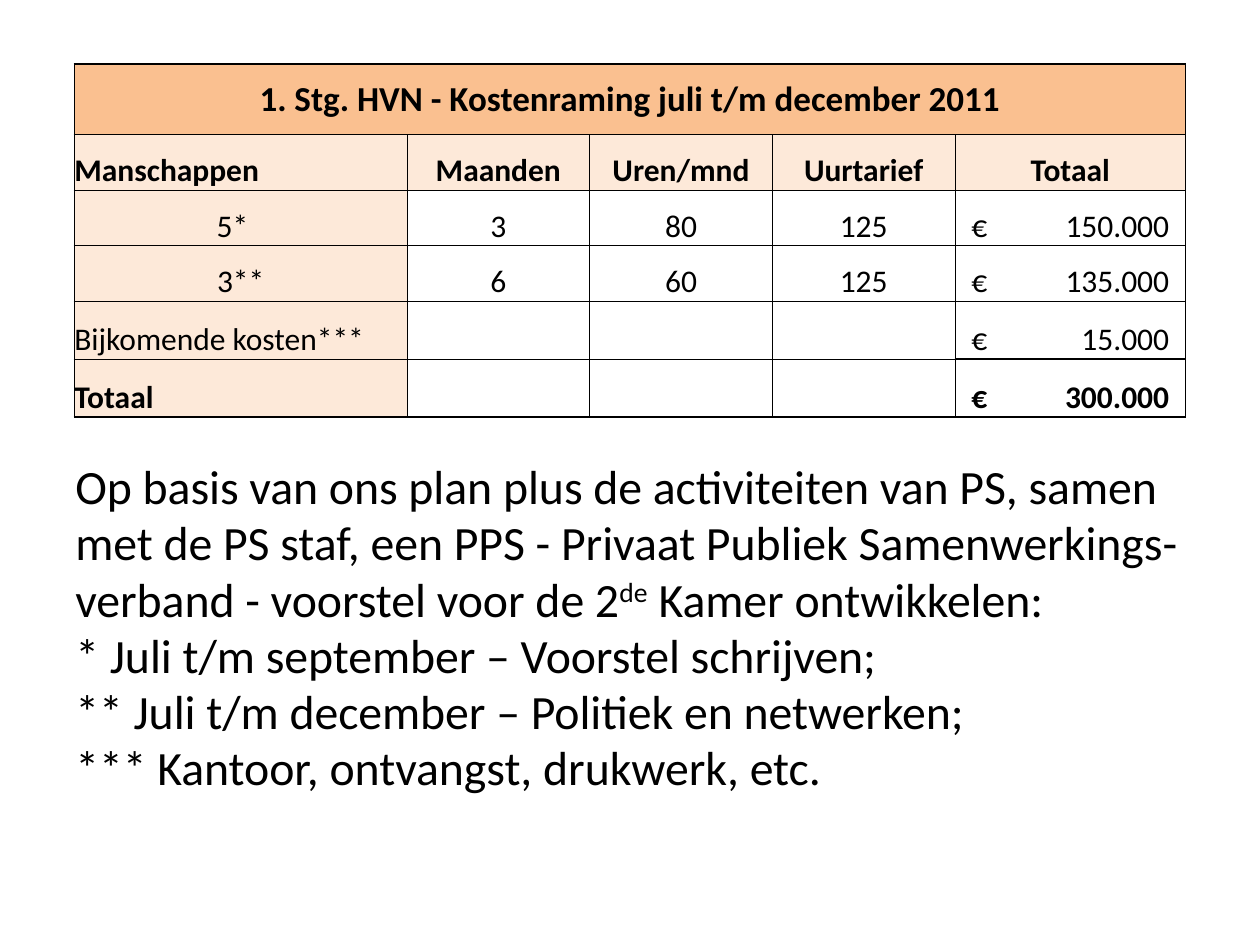
from lxml import etree
from pptx import Presentation, util as u
from pptx.dml import color
from pptx.enum import text
from pptx.oxml import ns

WIDTH, HEIGHT = 10, 7.5
COLUMNS = [2.64, 1.45, 1.45, 1.45, 1.83]
ROWS = [0.56, 0.44, 0.44, 0.44, 0.46, 0.46]
LAST_ROW, LAST_COLUMN = len(ROWS) - 1, len(COLUMNS) - 1
INK, TITLE_FILL, LABEL_FILL = "000000", "FAC090", "FDE9D9"
COSTS = [
    ["1. Stg. HVN - Kostenraming juli t/m december 2011", "", "", "", ""],
    ["Manschappen", "Maanden", "Uren/mnd", "Uurtarief", "Totaal"],
    ["5*", "3", "80", "125", "€\t150.000"],
    ["3**", "6", "60", "125", "€\t135.000"],
    ["Bijkomende kosten***", "", "", "", "€\t15.000"],
    ["Totaal", "", "", "", "€\t300.000"],
]
NOTES = [
    [("Op basis van ons plan plus de activiteiten van PS, samen met de PS staf, "
      "een PPS - Privaat Publiek Samenwerkings-verband - voorstel voor de 2", False),
     ("de", True), (" Kamer ontwikkelen:", False)],
    [("* Juli t/m september – Voorstel schrijven;", False)],
    [("** Juli t/m december – Politiek en netwerken;", False)],
    [("*** Kantoor, ontvangst, drukwerk, etc.", False)],
]


def rgb(value):
    """Return the colour of a hex string."""
    return color.RGBColor.from_string(value)


def apply(target, values):
    """Set each attribute of the target from a dict."""
    for name, value in values.items():
        setattr(target, name, value)


def format_font(font, size, bold=False):
    """Give a font the slide's typeface and ink."""
    apply(font, {"name": "Calibri", "size": u.Pt(size), "bold": bold})
    font.color.rgb = rgb(INK)


def add_borders(cell, widths):
    """Draw the cell's edges with the given widths in points."""
    properties = cell._tc.get_or_add_tcPr()
    for index, (side, width) in enumerate(widths.items()):
        line = etree.Element(ns.qn(f"a:ln{side}"), w=str(u.Pt(width)))
        fill = etree.SubElement(line, ns.qn("a:solidFill"))
        etree.SubElement(fill, ns.qn("a:srgbClr"), val=INK)
        properties.insert(index, line)


def border_widths(row, column):
    """Return heavy outer edges, a heavy line above the sum and thin inner edges."""
    above_sum = column == LAST_COLUMN
    heavy = {
        "L": column == 0,
        "R": column == LAST_COLUMN or row == 0,
        "T": row == 0 or (above_sum and row == LAST_ROW),
        "B": row == LAST_ROW or (above_sum and row == LAST_ROW - 1),
    }
    return {side: 1 if is_heavy else 0.5 for side, is_heavy in heavy.items()}


def add_right_tab(paragraph, position):
    """Add a right-aligned tab stop at a position in inches."""
    tabs = etree.SubElement(paragraph._p.get_or_add_pPr(), ns.qn("a:tabLst"))
    etree.SubElement(tabs, ns.qn("a:tab"), pos=str(u.Inches(position)), algn="r")


def fill_cell(cell, row, column, wording):
    """Write and format one cell by its place in the table."""
    is_amount = "\t" in wording
    is_left = is_amount or (column == 0 and row in (1, 4, 5))
    apply(cell, {
        "margin_left": u.Inches(0.13 if is_amount else 0),
        "margin_right": u.Inches(0.13 if wording == "5*" else 0),
        "margin_top": 0,
        "margin_bottom": 0,
        "vertical_anchor": text.MSO_ANCHOR.MIDDLE if row == 0 else text.MSO_ANCHOR.BOTTOM,
    })
    paragraph = cell.text_frame.paragraphs[0]
    paragraph.alignment = text.PP_ALIGN.LEFT if is_left else text.PP_ALIGN.CENTER
    if is_amount:
        add_right_tab(paragraph, 1.57)
    if wording:
        run = paragraph.add_run()
        run.text = wording
        format_font(run.font, 20 if row == 0 else 18, row in (0, 1, LAST_ROW))
    if row <= 1 or column == 0:
        cell.fill.solid()
        cell.fill.fore_color.rgb = rgb(LABEL_FILL if row else TITLE_FILL)
    else:
        cell.fill.background()
    add_borders(cell, border_widths(row, column))


def add_cost_table(slide):
    """Add the cost estimate with its merged title row."""
    frame = slide.shapes.add_table(
        len(ROWS), len(COLUMNS), u.Inches(0.59), u.Inches(0.51),
        u.Inches(sum(COLUMNS)), u.Inches(sum(ROWS)))
    table = frame.table
    apply(table, {"first_row": False, "horz_banding": False})
    for column, width in zip(table.columns, COLUMNS):
        column.width = u.Inches(width)
    for row, height in zip(table.rows, ROWS):
        row.height = u.Inches(height)
    table.cell(0, 0).merge(table.cell(0, LAST_COLUMN))
    for row, wordings in enumerate(COSTS):
        for column, wording in enumerate(wordings):
            fill_cell(table.cell(row, column), row, column, wording)


def add_notes_text(slide):
    """Add the explanation below the table."""
    box = slide.shapes.add_textbox(
        u.Inches(WIDTH * 0.05), u.Inches(HEIGHT * 0.48),
        u.Inches(WIDTH * 0.9), u.Inches(3.14))
    frame = box.text_frame
    frame.word_wrap = True
    for index, runs in enumerate(NOTES):
        paragraph = frame.add_paragraph() if index else frame.paragraphs[0]
        paragraph.line_spacing = 0.98
        for wording, raised in runs:
            run = paragraph.add_run()
            run.text = wording
            format_font(run.font, 27.3)
            if raised:
                run._r.get_or_add_rPr().set("baseline", "30000")


def main():
    """Build the slide and save it."""
    presentation = Presentation()
    apply(presentation, {"slide_width": u.Inches(WIDTH), "slide_height": u.Inches(HEIGHT)})
    slide = presentation.slides.add_slide(presentation.slide_layouts[6])
    add_cost_table(slide)
    add_notes_text(slide)
    presentation.save("out.pptx")


if __name__ == "__main__":
    main()
